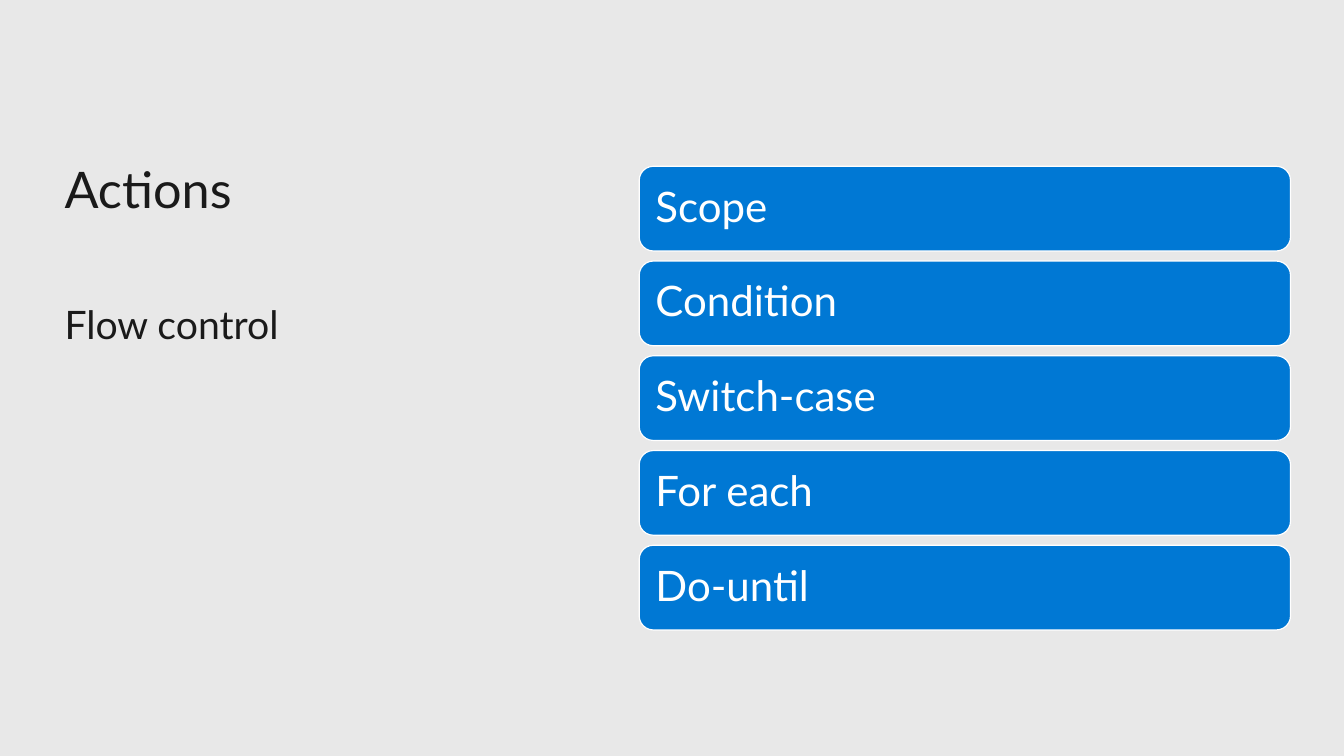
"""Build the slide that lists the flow control actions."""
from dataclasses import dataclass

import pptx
import pptx.dml.color
import pptx.enum.shapes
import pptx.enum.text
import pptx.util

Inches = pptx.util.Inches
Anchor = pptx.enum.text.MSO_ANCHOR


@dataclass(frozen=True)
class Theme:
    font: str = "Lato"
    background: str = "E8E8E8"
    ink: str = "1A1A1A"
    accent: str = "0078D4"
    light: str = "FFFFFF"
    title_size: float = 36
    subtitle_size: float = 28
    bar_size: float = 30
    outline: float = 0.85


def rgb(value):
    return pptx.dml.color.RGBColor.from_string(value)


def write(frame, text, *, font, size, color, anchor=Anchor.TOP, inset=0, spacing=1.0):
    frame.word_wrap = True
    frame.auto_size = pptx.enum.text.MSO_AUTO_SIZE.NONE
    frame.vertical_anchor = anchor
    frame.margin_left = frame.margin_right = Inches(inset)
    frame.margin_top = frame.margin_bottom = Inches(inset)
    para = frame.paragraphs[0]
    para.alignment = pptx.enum.text.PP_ALIGN.LEFT
    para.line_spacing = spacing
    span = para.add_run()
    span.text = text
    span.font.name = font
    span.font.size = pptx.util.Pt(size)
    span.font.color.rgb = rgb(color)


class SlideBuilder:
    def __init__(self, page, theme):
        self.page = page
        self.theme = theme
        page.background.fill.solid()
        page.background.fill.fore_color.rgb = rgb(theme.background)

    def title(self, text, left, top, width, height):
        box = self.page.shapes.title
        box.left, box.top = Inches(left), Inches(top)
        box.width, box.height = Inches(width), Inches(height)
        write(box.text_frame, text, font=self.theme.font,
              size=self.theme.title_size, color=self.theme.ink)

    def subtitle(self, text, left, top, width, height):
        box = self.page.shapes.add_textbox(
            Inches(left), Inches(top), Inches(width), Inches(height))
        write(box.text_frame, text, font=self.theme.font,
              size=self.theme.subtitle_size, color=self.theme.ink)

    def bar(self, text, left, top, width, height):
        box = self.page.shapes.add_shape(
            pptx.enum.shapes.MSO_SHAPE.ROUNDED_RECTANGLE,
            Inches(left), Inches(top), Inches(width), Inches(height))
        box.shadow.inherit = False
        box.fill.solid()
        box.fill.fore_color.rgb = rgb(self.theme.accent)
        box.line.color.rgb = rgb(self.theme.light)
        box.line.width = pptx.util.Pt(self.theme.outline)
        write(box.text_frame, text, font=self.theme.font, size=self.theme.bar_size,
              color=self.theme.light, anchor=Anchor.MIDDLE, inset=0.12, spacing=0.9)


def main():
    deck = pptx.Presentation()
    deck.slide_width, deck.slide_height = Inches(13.33), Inches(7.5)
    page = deck.slides.add_slide(deck.slide_layouts.get_by_name("Title Only"))
    builder = SlideBuilder(page, Theme())

    builder.title("Actions", 0.64, 1.57, 5.7, 0.6)
    builder.subtitle("Flow control", 0.64, 2.98, 5.7, 0.47)

    actions = ["Scope", "Condition", "Switch-case", "For each", "Do-until"]
    first_top, pitch = 1.65, 0.94
    for index, action in enumerate(actions):
        builder.bar(action, 6.34, first_top + index * pitch, 6.46, 0.84)

    deck.save("out.pptx")


if __name__ == "__main__":
    main()
